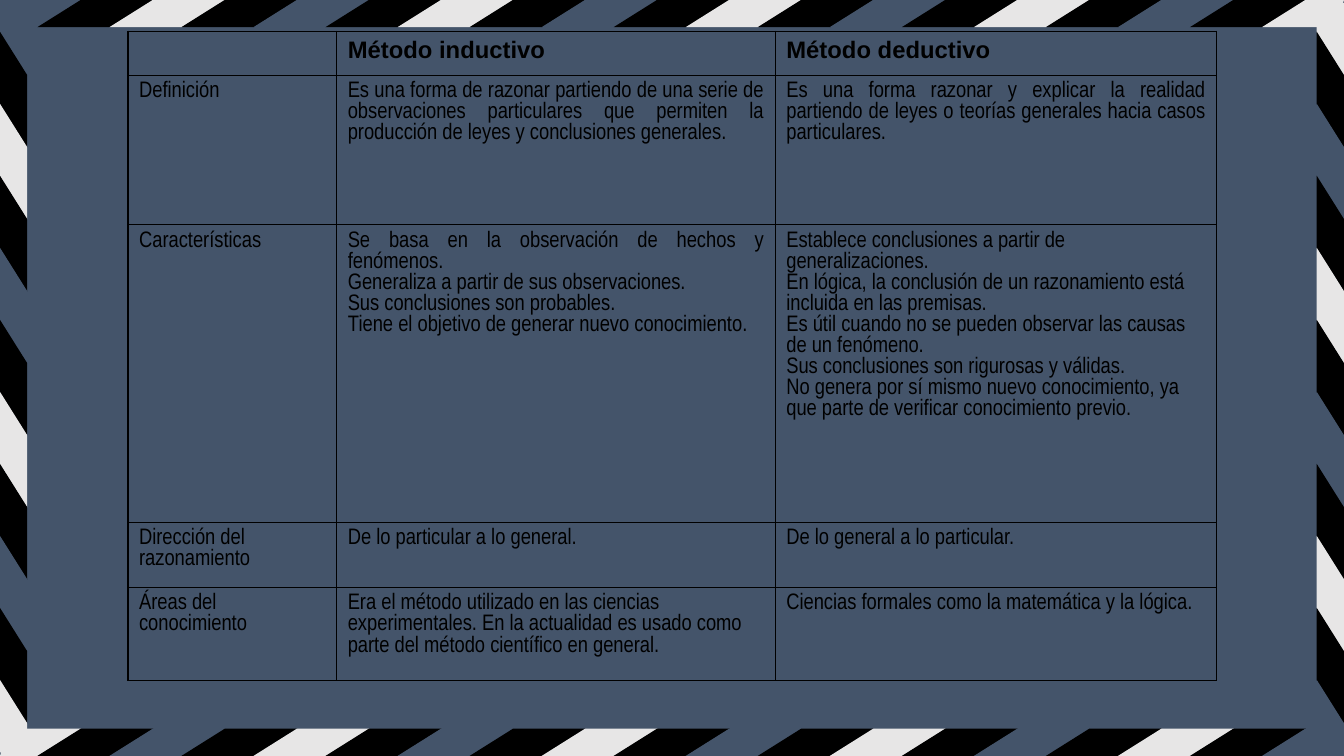
"""Build a slide comparing the inductive and deductive methods inside a striped frame."""
from dataclasses import dataclass

from lxml import etree
from pptx import Presentation, util as u
from pptx.dml.color import RGBColor
from pptx.enum import text
from pptx.oxml import ns

HEADINGS = ["", "Método inductivo", "Método deductivo"]
COMPARISON = [
    ("Definición",
     ["Es una forma de razonar partiendo de una serie de observaciones particulares "
      "que permiten la producción de leyes y conclusiones generales."],
     ["Es una forma razonar y explicar la realidad partiendo de leyes o teorías "
      "generales hacia casos particulares."]),
    ("Características",
     ["Se basa en la observación de hechos y fenómenos.",
      "Generaliza a partir de sus observaciones.",
      "Sus conclusiones son probables.",
      "Tiene el objetivo de generar nuevo conocimiento."],
     ["Establece conclusiones a partir de generalizaciones.",
      "En lógica, la conclusión de un razonamiento está incluida en las premisas.",
      "Es útil cuando no se pueden observar las causas de un fenómeno.",
      "Sus conclusiones son rigurosas y válidas.",
      "No genera por sí mismo nuevo conocimiento, ya que parte de verificar "
      "conocimiento previo."]),
    ("Dirección del razonamiento",
     ["De lo particular a lo general."],
     ["De lo general a lo particular."]),
    ("Áreas del conocimiento",
     ["Era el método utilizado en las ciencias experimentales. En la actualidad es "
      "usado como parte del método científico en general."],
     ["Ciencias formales como la matemática y la lógica."]),
]
JUSTIFIED = {(1, 1), (1, 2), (2, 1)}

WIDTH, HEIGHT = 13.33, 7.5
TABLE_LEFT, TABLE_TOP = 1.27, 0.31
COLUMNS = [2.07, 4.35, 4.38]
ROWS = [0.44, 1.48, 2.95, 0.65, 0.92]
MARGIN_X, MARGIN_Y = 0.11, 0.06

BAND, STRIPE, SLANT = 0.27, 0.72, 0.43
PITCH = 0.7145
FIRST_X, FIRST_Y = 0.37, -0.4
HORIZONTAL_BANDS = [(0, 3), (HEIGHT - BAND, 1)]
VERTICAL_BANDS = [(WIDTH - BAND, 0), (0, 2)]


@dataclass(frozen=True)
class Theme:
    """Colours, fonts and sizes of the slide."""
    slate: str = "44546A"
    black: str = "000000"
    light: str = "E7E6E6"
    heading_font: str = "Arial"
    body_font: str = "Arial Narrow"
    heading_size: int = 17
    body_size: int = 16
    border: float = 1


THEME = Theme()
STRIPE_COLOURS = [THEME.light, THEME.black, THEME.slate, THEME.black]


def draw_stripe(slide, corners, colour):
    """Draw one stripe, held within the slide."""
    points = [(u.Inches(min(max(x, 0), WIDTH)), u.Inches(min(max(y, 0), HEIGHT)))
              for x, y in corners]
    outline = slide.shapes.build_freeform(*points[0])
    outline.add_line_segments(points[1:])
    stripe = outline.convert_to_shape()
    stripe.shadow.inherit = False
    stripe.fill.solid()
    stripe.fill.fore_color.rgb = RGBColor.from_string(colour)
    stripe.line.fill.background()


def draw_frame(slide):
    """Draw the slanted stripes along the four edges."""
    for top, shift in HORIZONTAL_BANDS:
        for step in range(-1, 18):
            x = FIRST_X + step * PITCH
            corners = [(x + SLANT, top), (x, top + BAND),
                       (x + STRIPE, top + BAND), (x + STRIPE + SLANT, top)]
            draw_stripe(slide, corners, STRIPE_COLOURS[(step + shift) % 4])
    for left, shift in VERTICAL_BANDS:
        for step in range(11):
            y = FIRST_Y + step * PITCH
            corners = [(left, y), (left, y + STRIPE),
                       (left + BAND, y + STRIPE + SLANT), (left + BAND, y + SLANT)]
            draw_stripe(slide, corners, STRIPE_COLOURS[(step + shift) % 4])


def add_borders(cell):
    """Outline a cell on its four sides."""
    properties = cell._tc.get_or_add_tcPr()
    for position, side in enumerate(("a:lnL", "a:lnR", "a:lnT", "a:lnB")):
        border = etree.Element(ns.qn(side), w=str(u.Pt(THEME.border)))
        fill = etree.SubElement(border, ns.qn("a:solidFill"))
        etree.SubElement(fill, ns.qn("a:srgbClr"), val=THEME.black)
        properties.insert(position, border)


def fill_cell(cell, lines, heading, justified):
    """Write and format the paragraphs of a cell."""
    cell.fill.background()
    add_borders(cell)
    cell.margin_left = cell.margin_right = u.Inches(MARGIN_X)
    cell.margin_top = cell.margin_bottom = u.Inches(MARGIN_Y)
    cell.text_frame.text = "\n".join(lines)
    for paragraph in cell.text_frame.paragraphs:
        paragraph.alignment = text.PP_ALIGN.JUSTIFY if justified else text.PP_ALIGN.LEFT
        font = paragraph.font
        font.name = THEME.heading_font if heading else THEME.body_font
        font.size = u.Pt(THEME.heading_size if heading else THEME.body_size)
        font.bold = heading
        font.color.rgb = RGBColor.from_string(THEME.black)


def draw_comparison(slide):
    """Add the comparison table."""
    lengths = (TABLE_LEFT, TABLE_TOP, sum(COLUMNS), sum(ROWS))
    table = slide.shapes.add_table(len(ROWS), len(COLUMNS), *map(u.Inches, lengths)).table
    table.first_row = table.horz_banding = False
    for column, width in zip(table.columns, COLUMNS):
        column.width = u.Inches(width)
    for row, height in zip(table.rows, ROWS):
        row.height = u.Inches(height)
    content = [[[heading] for heading in HEADINGS]]
    content += [[[topic], inductive, deductive] for topic, inductive, deductive in COMPARISON]
    for r, row in enumerate(content):
        for c, lines in enumerate(row):
            fill_cell(table.cell(r, c), lines, r == 0, (r, c) in JUSTIFIED)


def main():
    """Assemble and save the presentation."""
    deck = Presentation()
    deck.slide_width, deck.slide_height = u.Inches(WIDTH), u.Inches(HEIGHT)
    slide = deck.slides.add_slide(deck.slide_layouts[6])
    slide.background.fill.solid()
    slide.background.fill.fore_color.rgb = RGBColor.from_string(THEME.slate)
    draw_frame(slide)
    draw_comparison(slide)
    deck.save("out.pptx")


if __name__ == "__main__":
    main()
